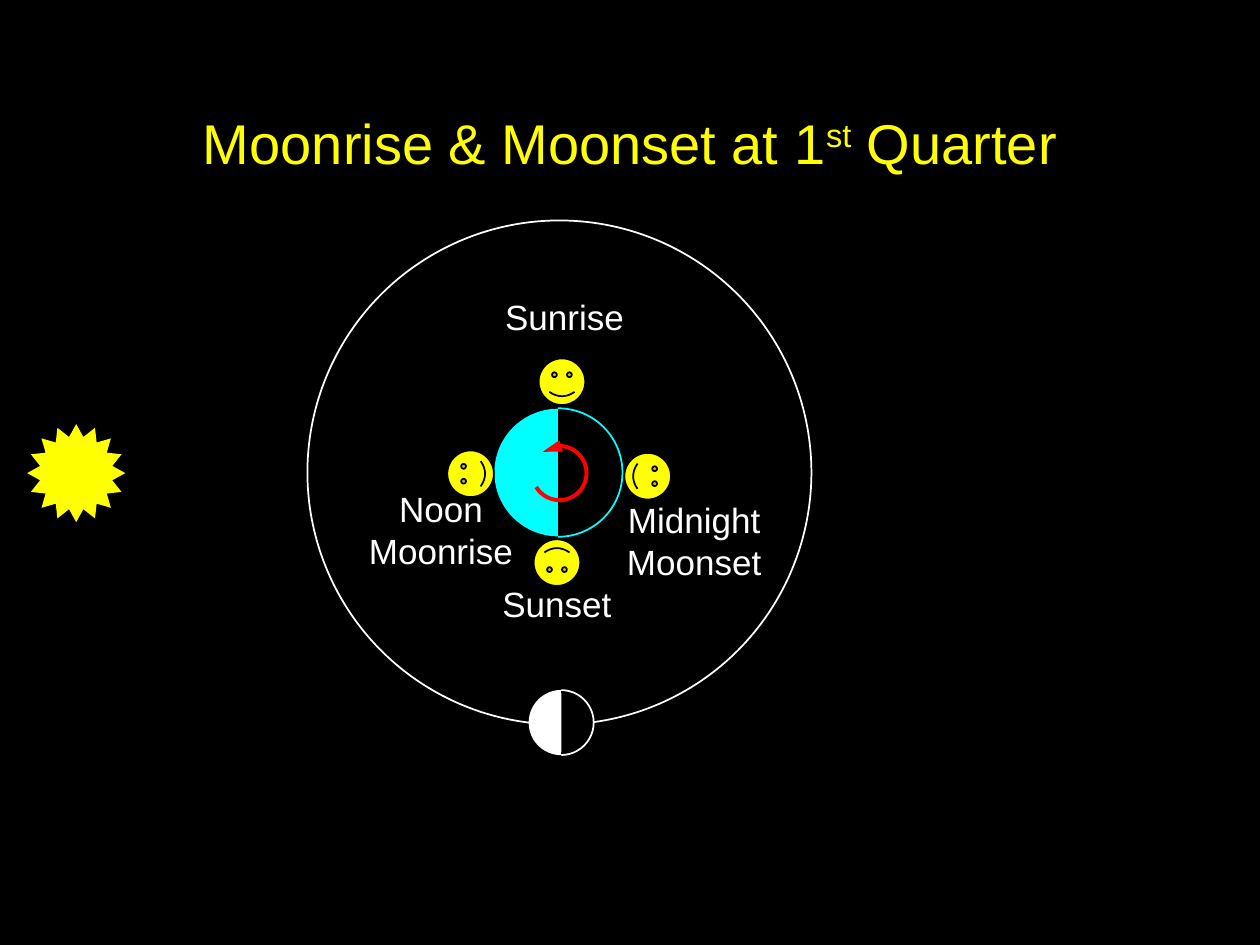
from collections import namedtuple

from lxml import etree
from pptx import Presentation, util as u
from pptx.dml.color import RGBColor
from pptx.enum import shapes, text
from pptx.oxml.ns import qn

BLACK = RGBColor(0x00, 0x00, 0x00)
WHITE = RGBColor(0xFF, 0xFF, 0xFF)
YELLOW = RGBColor(0xFF, 0xFF, 0x00)
CYAN = RGBColor(0x00, 0xFF, 0xFF)
RED = RGBColor(0xFF, 0x00, 0x00)
FONT = "Arial"

# The slide is a grid of 1000 columns by 750 rows of square cells.
COLUMNS, ROWS = 1000, 750
CELL = u.Inches(0.01)
FACE = 37
KIND = shapes.MSO_SHAPE

Box = namedtuple("Box", "left top width height")


def square(cx, cy, size):
    """Box of equal sides around a centre."""
    return Box(cx - size / 2, cy - size / 2, size, size)


def emu(box):
    return [round(cells * CELL) for cells in box]


def add_outline(parent, kind, box, line, fill=None, width=1):
    shape = parent.add_shape(kind, *emu(box))
    shape.shadow.inherit = False
    if fill is None:
        shape.fill.background()
    else:
        shape.fill.solid()
        shape.fill.fore_color.rgb = fill
    shape.line.color.rgb = line
    shape.line.width = u.Pt(width)
    return shape


def add_line_detail(shape, tag, **attributes):
    detail = etree.SubElement(shape.line._get_or_add_ln(), qn(tag))
    for name, value in attributes.items():
        detail.set(name, value)


def add_arc(parent, box, start, end, line, fill=None, width=1):
    """Clockwise arc between two angles in degrees, measured from the right."""
    arc = add_outline(parent, KIND.ARC, box, line, fill, width)
    for index, degrees in enumerate((start, end)):
        arc.adjustments[index] = degrees * 0.6  # 60000 units a degree, over 100000
    return arc


def add_run(paragraph, words, size, color):
    run = paragraph.add_run()
    run.text = words
    run.font.name = FONT
    run.font.size = u.Pt(size)
    run.font.color.rgb = color
    return run


def draw_title(title, box):
    title.left, title.top, title.width, title.height = emu(box)
    frame = title.text_frame
    frame.auto_size = text.MSO_AUTO_SIZE.NONE
    frame.vertical_anchor = text.MSO_ANCHOR.MIDDLE
    heading = frame.paragraphs[0]
    heading.alignment = text.PP_ALIGN.CENTER
    for words, raised in (("Moonrise & Moonset at 1", False), ("st", True), (" Quarter", False)):
        run = add_run(heading, words, 32, YELLOW)
        if raised:
            run.font._element.set("baseline", "30000")


def draw_sun(slide, box):
    sun = add_outline(slide.shapes, KIND.STAR_16_POINT, box, YELLOW, YELLOW)
    sun.adjustments[0] = 0.375
    add_line_detail(sun, "a:miter", lim="800000")


def draw_half_lit(slide, box, color):
    """Globe lit from the left, with its night side to the right."""
    globe = slide.shapes.add_group_shape().shapes
    inner = Box(box.left + box.width * 0.01, box.top + box.height * 0.01,
                box.width * 0.98, box.height * 0.98)
    add_outline(globe, KIND.OVAL, inner, color, color)
    add_arc(globe, box, 270, 90, color, BLACK)


def draw_observer(slide, face_box, turn, label_box, lines):
    """Person standing on Earth, with the time of day beside."""
    observer = slide.shapes.add_group_shape().shapes
    face = add_outline(observer, KIND.SMILEY_FACE, face_box, BLACK, YELLOW)
    face.adjustments[0] = 0.047
    face.rotation = turn
    label = observer.add_textbox(*emu(label_box))
    frame = label.text_frame
    frame.word_wrap = False
    frame.auto_size = text.MSO_AUTO_SIZE.SHAPE_TO_FIT_TEXT
    for index, words in enumerate(lines):
        paragraph = frame.add_paragraph() if index else frame.paragraphs[0]
        paragraph.alignment = text.PP_ALIGN.CENTER
        add_run(paragraph, words, 20, WHITE)


def draw_spin(slide, box):
    """Earth turns counterclockwise."""
    spin = add_arc(slide.shapes, box, 231.5, 149, RED, width=2.25)
    add_line_detail(spin, "a:headEnd", type="triangle", len="lg")


def draw_orbit(slide, box):
    """Moon's orbit, with Earth and its observers placed from the centre."""
    cx, cy = box.left + box.width / 2, box.top + box.height / 2
    draw_half_lit(slide, square(cx - 1, cy, 102), CYAN)
    observers = [  # face offset, turn, label offset and size, lines
        ((-2, 71.5), 180, (-57, 82, 110, 43), ["Sunset"]),
        ((2, -72), 0, (-55, -145, 118, 43), ["Sunrise"]),
        ((70, 3), 90, (42, 16, 130, 77), ["Midnight", "Moonset"]),
        ((-70.5, 1), 270, (-163, 7, 138, 77), ["Noon", "Moonrise"]),
    ]
    for (dx, dy), turn, (left, top, width, height), lines in observers:
        draw_observer(slide, square(cx + dx, cy + dy, FACE), turn,
                      Box(cx + left, cy + top, width, height), lines)
    add_outline(slide.shapes, KIND.OVAL, box, WHITE)
    draw_half_lit(slide, square(cx + 1.5, box.top + box.height - 1.5, 51.5), WHITE)
    draw_spin(slide, square(cx, cy + 0.5, 43))


def main():
    deck = Presentation()
    deck.slide_width, deck.slide_height = COLUMNS * CELL, ROWS * CELL
    slide = deck.slides.add_slide(deck.slide_layouts[5])
    slide.background.fill.solid()
    slide.background.fill.fore_color.rgb = BLACK

    draw_title(slide.shapes.title, Box(75, 50, 850, 125))
    draw_sun(slide, Box(23, 338, 75, 75))
    draw_orbit(slide, Box(244, 175, 400, 400))
    deck.save("out.pptx")


if __name__ == "__main__":
    main()
